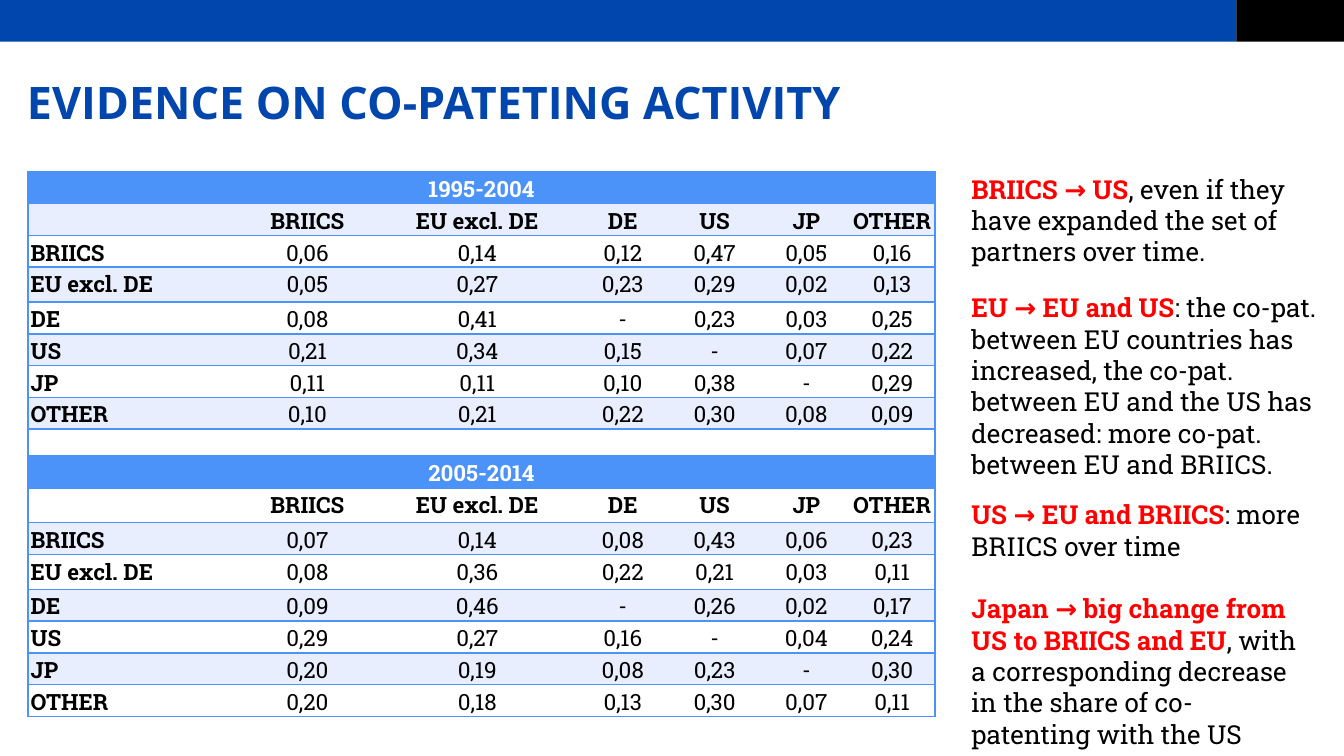
from dataclasses import dataclass

from lxml.etree import SubElement
from pptx import Presentation
from pptx.dml.color import RGBColor
from pptx.enum.shapes import MSO_SHAPE as Preset
from pptx.enum.text import MSO_ANCHOR as Anchor, PP_ALIGN as Align
from pptx.oxml.ns import qn
from pptx.util import Cm, Pt


@dataclass(frozen=True)
class Theme:
    navy: str = "0046AD"
    black: str = "000000"
    white: str = "FFFFFF"
    blue: str = "4B92F9"
    pale: str = "E9EEFE"
    red: str = "FF0000"
    heading_font: str = "Open Sans"
    body_font: str = "Roboto Slab"
    title_size: float = 24
    note_size: float = 14
    table_size: float = 12
    spacer_size: float = 8
    title_leading: float = 35
    note_leading: float = 16.8
    table_leading: float = 1.07


THEME = Theme()

REGIONS = ["BRIICS", "EU excl. DE", "DE", "US", "JP", "OTHER"]
# Period, fill of its column heads, shares by region, taller rows
PERIODS = [
    ("1995-2004", THEME.pale, [
        "0,06 0,14 0,12 0,47 0,05 0,16",
        "0,05 0,27 0,23 0,29 0,02 0,13",
        "0,08 0,41 - 0,23 0,03 0,25",
        "0,21 0,34 0,15 - 0,07 0,22",
        "0,11 0,11 0,10 0,38 - 0,29",
        "0,10 0,21 0,22 0,30 0,08 0,09"], {3}),
    ("2005-2014", THEME.white, [
        "0,07 0,14 0,08 0,43 0,06 0,23",
        "0,08 0,36 0,22 0,21 0,03 0,11",
        "0,09 0,46 - 0,26 0,02 0,17",
        "0,29 0,27 0,16 - 0,04 0,24",
        "0,20 0,19 0,08 0,23 - 0,30",
        "0,20 0,18 0,13 0,30 0,07 0,11"], {1, 3}),
]
COLUMN_WIDTHS = [4.01, 2.54, 3.88, 1.62, 1.85, 1.62, 1.62]
ROW_HEIGHT, TALL_ROW, SPACER_ROW = 0.6, 0.66, 0.51

# Box, inset, and paragraphs as (highlight, remainder)
NOTES = [
    ((18.36, 3.25, 6.78, 1.8), (0, 0), [
        ("BRIICS → US",
         ", even if they have expanded the set of partners over time.")]),
    ((18.36, 5.49, 6.91, 3.58), (0, 0), [
        ("EU → EU and US",
         ": the co-pat. between EU countries has increased, the co-pat. between "
         "EU and the US has decreased: more co-pat. between EU and BRIICS.")]),
    ((18.11, 9.25, 6.91, 5.05), (0.25, 0.13), [
        ("US → EU and BRIICS", ": more BRIICS over time"),
        ("Japan → big change from US to BRIICS and EU",
         ", with a corresponding decrease in the share of co-patenting with the US")]),
]


def set_all(target, formats):
    for name, value in formats.items():
        setattr(target, name, value)


def add_run(paragraph, text, color, size, bold=False, font=THEME.body_font):
    run = paragraph.add_run()
    run.text = text
    set_all(run.font, {"name": font, "size": Pt(size), "bold": bold})
    run.font.color.rgb = RGBColor.from_string(color)


def add_frame(slide, box, inset=(0, 0)):
    frame = slide.shapes.add_textbox(*map(Cm, box)).text_frame
    across, down = map(Cm, inset)
    set_all(frame, {"word_wrap": True, "vertical_anchor": Anchor.BOTTOM,
                    "margin_left": across, "margin_right": across,
                    "margin_top": down, "margin_bottom": down})
    return frame


def draw_banner(slide, box):
    left, top, width, height = box
    split = width * 0.92
    for x, part, color in [(left, split, THEME.navy),
                           (left + split, width - split, THEME.black)]:
        band = slide.shapes.add_shape(Preset.RECTANGLE, *map(Cm, (x, top, part, height)))
        band.shadow.inherit = False
        band.fill.solid()
        band.fill.fore_color.rgb = RGBColor.from_string(color)
        band.line.fill.background()


def draw_title(slide, box):
    title = add_frame(slide, box).paragraphs[0]
    title.line_spacing = Pt(THEME.title_leading)
    add_run(title, "EVIDENCE ON CO-PATETING ACTIVITY", THEME.navy,
            THEME.title_size, True, THEME.heading_font)


def set_borders(cell, sides):
    """Rule the given sides of a cell and leave the others open."""
    properties = cell._tc.get_or_add_tcPr()
    for position, side in enumerate("LRTB"):
        line = properties.makeelement(qn(f"a:ln{side}"), {"w": str(Pt(1))})
        if side in sides:
            fill = SubElement(line, qn("a:solidFill"))
            SubElement(fill, qn("a:srgbClr"), val=THEME.blue)
        else:
            SubElement(line, qn("a:noFill"))
        properties.insert(position, line)


def fill_cell(cell, text, fill, sides, color=THEME.black, bold=False,
              align=Align.CENTER):
    set_all(cell, {"margin_left": Cm(0.05), "margin_right": Cm(0.05),
                   "margin_top": 0, "margin_bottom": 0})
    cell.fill.solid()
    cell.fill.fore_color.rgb = RGBColor.from_string(fill)
    set_borders(cell, sides)
    paragraph = cell.text_frame.paragraphs[0]
    if text:
        set_all(paragraph, {"alignment": align, "line_spacing": THEME.table_leading})
        add_run(paragraph, text, color, THEME.table_size, bold)
    else:
        SubElement(paragraph._p, qn("a:endParaRPr"), sz=str(int(THEME.spacer_size * 100)))


def table_rows():
    """Yield the texts, fill and height of each row."""
    for number, (period, head_fill, shares, tall) in enumerate(PERIODS):
        if number:
            yield [""] * 7, THEME.white, SPACER_ROW
        yield [period] + [""] * 6, THEME.blue, ROW_HEIGHT
        lines = [["", *REGIONS]]
        lines += [[region, *row.split()] for region, row in zip(REGIONS, shares)]
        fills = [THEME.pale, THEME.white]
        start = fills.index(head_fill)
        for index, texts in enumerate(lines):
            height = TALL_ROW if index in tall or (number and index == 0) else ROW_HEIGHT
            # The second period has tall heads and a tall EU row only
            if number and index == 1 or number and index == 3:
                height = ROW_HEIGHT
            if number and index == 2:
                height = TALL_ROW
            if not number:
                height = TALL_ROW if index == 2 else ROW_HEIGHT
            yield texts, fills[(start + index) % 2], height


def draw_table(slide, box):
    rows = list(table_rows())
    table = slide.shapes.add_table(len(rows), len(COLUMN_WIDTHS), *map(Cm, box)).table
    set_all(table, {"first_row": False, "horz_banding": False})
    for column, width in zip(table.columns, COLUMN_WIDTHS):
        column.width = Cm(width)
    last = len(COLUMN_WIDTHS) - 1
    for r, (texts, fill, height) in enumerate(rows):
        table.rows[r].height = Cm(height)
        is_period = fill == THEME.blue
        is_head = texts[1:] == REGIONS
        for c, text in enumerate(texts):
            sides = "TB" + "L" * (c == 0 or is_period) + "R" * (c == last or is_period)
            fill_cell(table.cell(r, c), text, fill, sides,
                      THEME.white if is_period else THEME.black,
                      bold=c == 0 or is_head,
                      align=Align.LEFT if c == 0 and not is_period else Align.CENTER)
        if is_period:
            table.cell(r, 0).merge(table.cell(r, last))


def draw_note(slide, box, inset, paragraphs):
    frame = add_frame(slide, box, inset)
    for index, (highlight, remainder) in enumerate(paragraphs):
        paragraph = frame.add_paragraph() if index else frame.paragraphs[0]
        set_all(paragraph, {"line_spacing": Pt(THEME.note_leading),
                            "space_before": Pt(THEME.note_leading * bool(index))})
        add_run(paragraph, highlight, THEME.red, THEME.note_size, True)
        add_run(paragraph, remainder, THEME.black, THEME.note_size)


def main():
    deck = Presentation()
    set_all(deck, {"slide_width": Cm(25.4), "slide_height": Cm(14.29)})
    slide = deck.slides.add_slide(deck.slide_layouts[6])
    draw_banner(slide, (0, 0, 25.4, 0.79))
    draw_title(slide, (0.51, 1.19, 21.06, 1.24))
    draw_table(slide, (0.53, 3.25, 17.14, 10.29))
    for note in NOTES:
        draw_note(slide, *note)
    deck.save("out.pptx")


if __name__ == "__main__":
    main()
